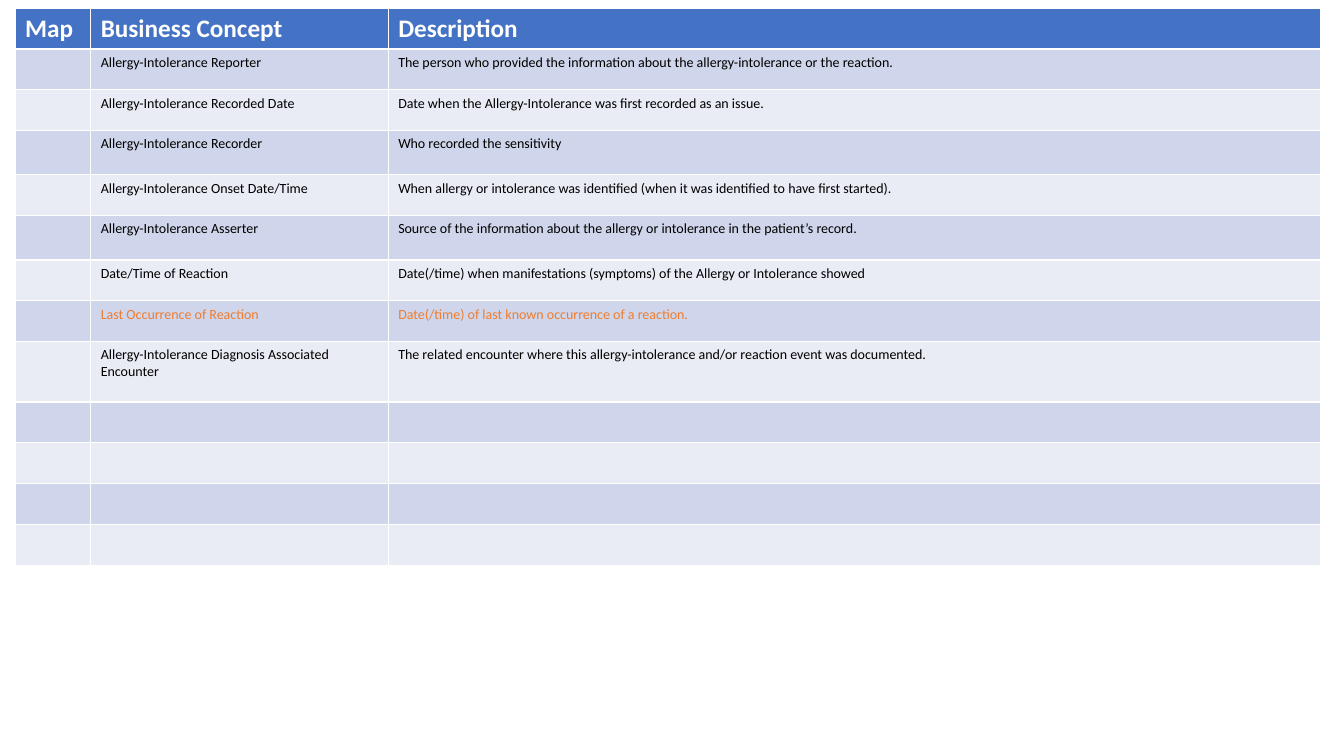
from dataclasses import dataclass

from pptx import Presentation
from pptx.dml.color import RGBColor as Color
from pptx.util import Inches, Pt

HEADINGS = ("Map", "Business Concept", "Description")
CONCEPTS = [
    ("Allergy-Intolerance Reporter",
     "The person who provided the information about the allergy-intolerance or the reaction."),
    ("Allergy-Intolerance Recorded Date",
     "Date when the Allergy-Intolerance was first recorded as an issue."),
    ("Allergy-Intolerance Recorder", "Who recorded the sensitivity"),
    ("Allergy-Intolerance Onset Date/Time",
     "When allergy or intolerance was identified (when it was identified to have first started)."),
    ("Allergy-Intolerance Asserter",
     "Source of the information about the allergy or intolerance in the patient’s record."),
    ("Date/Time of Reaction",
     "Date(/time) when manifestations (symptoms) of the Allergy or Intolerance showed"),
    ("Last Occurrence of Reaction", "Date(/time) of last known occurrence of a reaction."),
    ("Allergy-Intolerance Diagnosis Associated Encounter",
     "The related encounter where this allergy-intolerance and/or reaction event was documented."),
]
HIGHLIGHTED = "Last Occurrence of Reaction"
SPARE_ROWS = 4

PAGE_WIDTH, PAGE_HEIGHT = 13.33, 7.5
TABLE_LEFT, TABLE_TOP = 0.15, 0.08
TABLE_WIDTH, TABLE_HEIGHT = 12.95, 5.53
COLUMN_WIDTHS = (0.75, 2.95, 9.25)
TALL_ROWS = {3: 0.44, 5: 0.44, 8: 0.6}


@dataclass(frozen=True)
class Theme:
    font: str = "Calibri"
    heading_size: int = 18
    body_size: int = 10
    heading_fill: str = "4472C4"
    heading_text: str = "FFFFFF"
    bands: tuple = ("E9EBF5", "CFD5EA")
    body_text: str = "000000"
    highlight: str = "ED7D31"


THEME = Theme()


def fill_cell(cell, text, fill, color, size, bold):
    cell.fill.solid()
    cell.fill.fore_color.rgb = Color.from_string(fill)
    cell.text = text
    para = cell.text_frame.paragraphs[0]
    para.font.name = THEME.font
    para.font.size = Pt(size)
    para.font.bold = bold
    para.font.color.rgb = Color.from_string(color)


def row_style(index, texts):
    if index == 0:
        return THEME.heading_fill, THEME.heading_text, THEME.heading_size, True
    color = THEME.highlight if HIGHLIGHTED in texts else THEME.body_text
    return THEME.bands[index % 2], color, THEME.body_size, False


def add_concept_table(page):
    rows = [HEADINGS]
    rows += [("", *concept) for concept in CONCEPTS]
    rows += [("",) * len(HEADINGS)] * SPARE_ROWS
    regular_height = (TABLE_HEIGHT - sum(TALL_ROWS.values())) / (len(rows) - len(TALL_ROWS))

    table = page.shapes.add_table(
        len(rows), len(HEADINGS), Inches(TABLE_LEFT), Inches(TABLE_TOP),
        Inches(TABLE_WIDTH), Inches(TABLE_HEIGHT)).table
    for column, width in zip(table.columns, COLUMN_WIDTHS):
        column.width = Inches(width)
    for index, texts in enumerate(rows):
        table.rows[index].height = Inches(TALL_ROWS.get(index, regular_height))
        style = row_style(index, texts)
        for cell, text in zip(table.rows[index].cells, texts):
            fill_cell(cell, text, *style)


def main():
    deck = Presentation()
    deck.slide_width, deck.slide_height = Inches(PAGE_WIDTH), Inches(PAGE_HEIGHT)
    page = deck.slides.add_slide(deck.slide_layouts[6])
    add_concept_table(page)
    deck.save("out.pptx")


if __name__ == "__main__":
    main()
